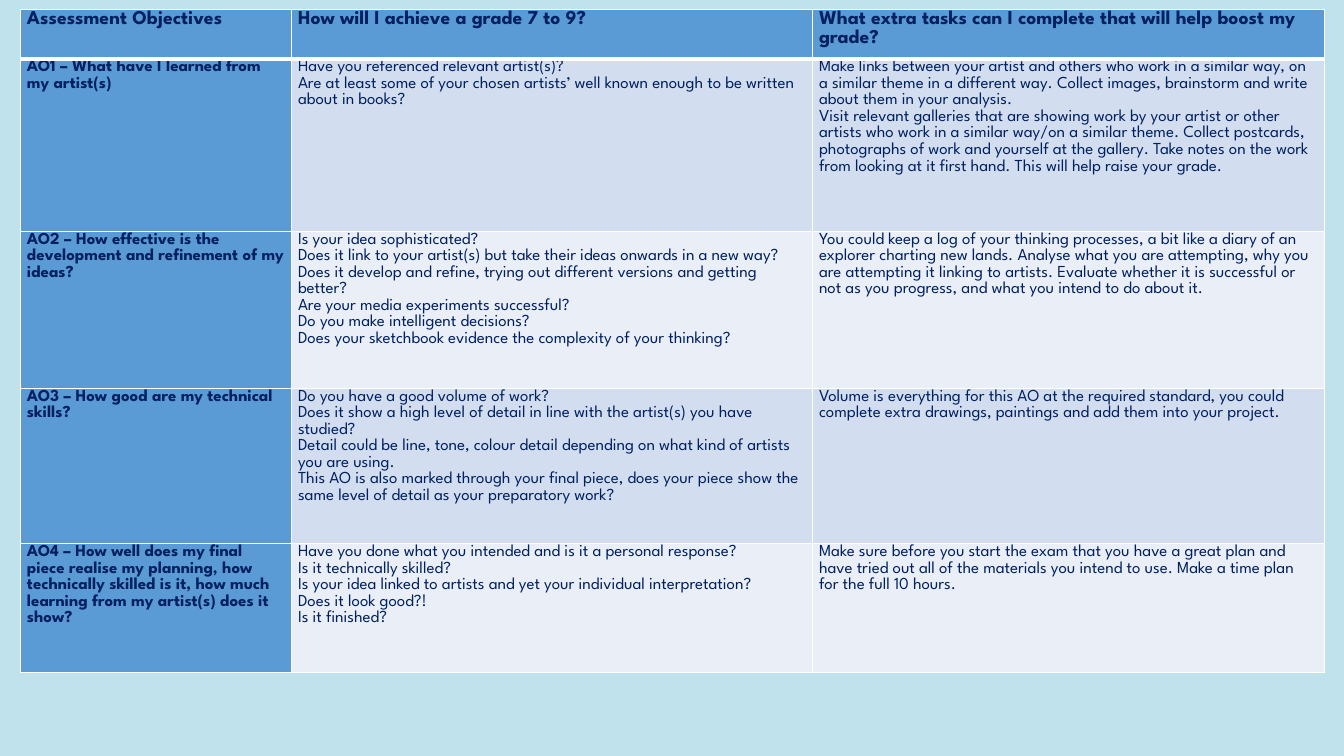
"""Builds a slide with a table of art assessment objectives and ways to raise the grade."""
from lxml import etree
from pptx import Presentation
from pptx import util as u
from pptx.dml.color import RGBColor
from pptx.oxml import ns

FONT = "League Spartan"
NAVY, BLUE, WHITE = "002060", "5B9BD5", "FFFFFF"
BANDS = ["D2DEEF", "EAEFF7"]


def colour(hex_code):
    return RGBColor.from_string(hex_code)


def add_border(cell, side, points):
    line = etree.SubElement(cell._tc.get_or_add_tcPr(), ns.qn(f"a:ln{side}"), w=str(u.Pt(points)))
    solid = etree.SubElement(line, ns.qn("a:solidFill"))
    etree.SubElement(solid, ns.qn("a:srgbClr"), val=WHITE)


objectives = [
    ["Assessment Objectives",
     "How will I achieve a grade 7 to 9?",
     "What extra tasks can I complete that will help boost my grade?"],
    ["AO1 – What have I learned from my artist(s)",
     "Have you referenced relevant artist(s)?\n"
     "Are at least some of your chosen artists’ well known enough to be written about in books?",
     "Make links between your artist and others who work in a similar way, on a similar theme "
     "in a different way. Collect images, brainstorm and write about them in your analysis.\n"
     "Visit relevant galleries that are showing work by your artist or other artists who work "
     "in a similar way/on a similar theme. Collect postcards, photographs of work and yourself "
     "at the gallery. Take notes on the work from looking at it first hand. "
     "This will help raise your grade."],
    ["AO2 – How effective is the development and refinement of my ideas?",
     "Is your idea sophisticated?\n"
     "Does it link to your artist(s) but take their ideas onwards in a new way?\n"
     "Does it develop and refine, trying out different versions and getting better?\n"
     "Are your media experiments successful?\n"
     "Do you make intelligent decisions?\n"
     "Does your sketchbook evidence the complexity of your thinking?",
     "You could keep a log of your thinking processes, a bit like a diary of an explorer "
     "charting new lands. Analyse what you are attempting, why you are attempting it linking "
     "to artists. Evaluate whether it is successful or not as you progress, and what you "
     "intend to do about it."],
    ["AO3 – How good are my technical skills?",
     "Do you have a good volume of work?\n"
     "Does it show a high level of detail in line with the artist(s) you have studied?\n"
     "Detail could be line, tone, colour detail depending on what kind of artists you are using.\n"
     "This AO is also marked through your final piece, does your piece show the same level "
     "of detail as your preparatory work?",
     "Volume is everything for this AO at the required standard, you could complete extra "
     "drawings, paintings and add them into your project."],
    ["AO4 – How well does my final piece realise my planning, how technically skilled is it, "
     "how much learning from my artist(s) does it show?",
     "Have you done what you intended and is it a personal response?\n"
     "Is it technically skilled?\n"
     "Is your idea linked to artists and yet your individual interpretation?\n"
     "Does it look good?!\n"
     "Is it finished?",
     "Make sure before you start the exam that you have a great plan and have tried out all "
     "of the materials you intend to use. Make a time plan for the full 10 hours."],
]
column_widths = [6.83, 13.13, 12.9]
row_heights = [1.26, 4.34, 3.96, 3.91, 3.25]

deck = Presentation()
deck.slide_width, deck.slide_height = u.Cm(33.87), u.Cm(19.05)
slide = deck.slides.add_slide(deck.slide_layouts[6])
slide.background.fill.solid()
slide.background.fill.fore_color.rgb = colour(BANDS[0])
slide.background.fill.fore_color.rgb = colour("C0E2EC")

grid = slide.shapes.add_table(
    len(row_heights), len(column_widths), u.Cm(0.51), u.Cm(0.23),
    u.Cm(sum(column_widths)), u.Cm(sum(row_heights))).table
for column, width in zip(grid.columns, column_widths):
    column.width = u.Cm(width)
for row, height in zip(grid.rows, row_heights):
    row.height = u.Cm(height)

for r, entries in enumerate(objectives):
    for c, entry in enumerate(entries):
        heading = r == 0 or c == 0
        cell = grid.cell(r, c)
        cell.margin_left = cell.margin_right = u.Cm(0.17)
        cell.margin_top = cell.margin_bottom = 0
        for side in "LRTB":
            under_header = (r, side) in [(0, "B"), (1, "T")]
            add_border(cell, side, 3 if under_header else 1)
        cell.fill.solid()
        cell.fill.fore_color.rgb = colour(BLUE if heading else BANDS[(r - 1) % 2])
        cell.text_frame.text = entry
        for paragraph in cell.text_frame.paragraphs:
            paragraph.line_spacing = 1.07
            for run in paragraph.runs:
                run.font.name = FONT
                run.font.size = u.Pt(14 if r == 0 else 12)
                run.font.bold = heading
                run.font.color.rgb = colour(NAVY)

deck.save("out.pptx")
